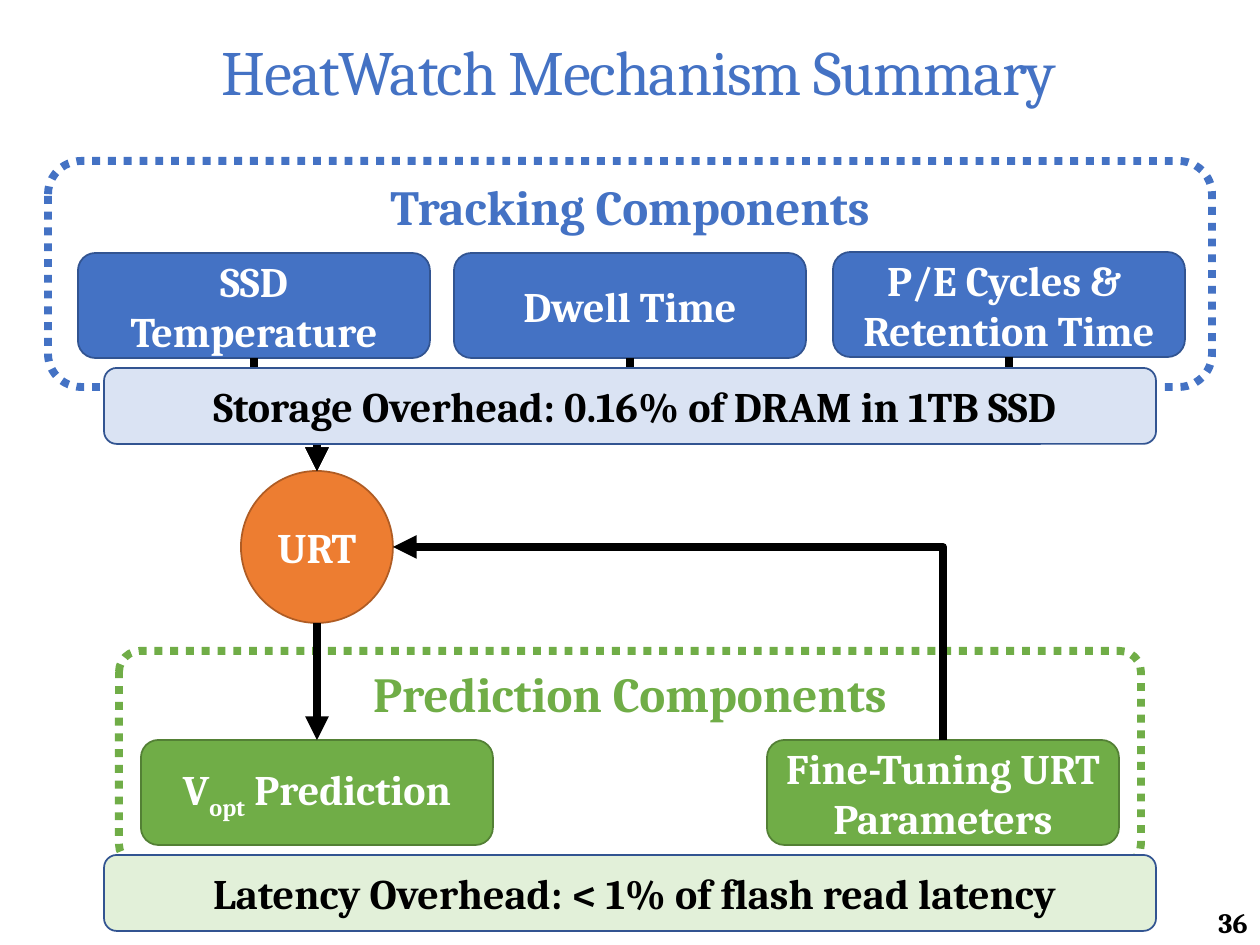
from dataclasses import dataclass

from lxml.etree import SubElement
from pptx import Presentation
from pptx.dml.color import RGBColor
from pptx.enum.dml import MSO_LINE
from pptx.enum.shapes import MSO_CONNECTOR, MSO_SHAPE
from pptx.enum.text import MSO_ANCHOR, MSO_AUTO_SIZE, PP_ALIGN
from pptx.oxml.ns import qn
from pptx.util import Pt

EMU_PER_PX = 914400 / 126
TOP, LEFT, BOTTOM, RIGHT = range(4)


@dataclass(frozen=True)
class Theme:
    font: str = "Cambria"
    blue: str = "4472C4"
    blue_edge: str = "325491"
    blue_pale: str = "DAE3F3"
    green: str = "70AD47"
    green_edge: str = "538035"
    green_pale: str = "E2F0D9"
    orange: str = "ED7D31"
    orange_edge: str = "AF5C24"
    black: str = "000000"
    white: str = "FFFFFF"
    title_size: int = 36
    group_size: int = 28
    label_size: int = 24
    number_size: int = 16
    thin: float = 1
    thick: float = 4.5


THEME = Theme()


def px(length):
    return round(length * EMU_PER_PX)


def rgb(color):
    return RGBColor.from_string(color)


def add_span(para, text, size, color, bold=True):
    span = para.add_run()
    span.text = text
    span.font.name = THEME.font
    span.font.size = Pt(size)
    span.font.bold = bold
    span.font.color.rgb = rgb(color)
    return span


def indent(para, left):
    properties = para._p.get_or_add_pPr()
    properties.set("marL", str(px(left)))
    properties.set("indent", "0")


def add_box(page, kind, place, fill, edge, width=THEME.thin):
    """Add a preset shape and return it with its centred first paragraph."""
    box = page.shapes.add_shape(kind, *map(px, place))
    box.shadow.inherit = False
    if fill:
        box.fill.solid()
        box.fill.fore_color.rgb = rgb(fill)
    else:
        box.fill.background()
    box.line.color.rgb = rgb(edge)
    box.line.width = Pt(width)
    box.text_frame.word_wrap = True
    box.text_frame.vertical_anchor = MSO_ANCHOR.MIDDLE
    para = box.text_frame.paragraphs[0]
    para.alignment = PP_ALIGN.CENTER
    return box, para


def add_group(page, place, corner, text, color):
    box, para = add_box(page, MSO_SHAPE.ROUNDED_RECTANGLE, place, None, color, THEME.thick)
    box.adjustments[0] = corner
    box.line.dash_style = MSO_LINE.ROUND_DOT
    box.text_frame.vertical_anchor = MSO_ANCHOR.TOP
    add_span(para, text, THEME.group_size, color)


def add_component(page, left, top, lines, fill, edge):
    """Each line is a list of (text, is_subscript) pieces."""
    place = (left, top, 352, 105)
    box, para = add_box(page, MSO_SHAPE.ROUNDED_RECTANGLE, place, fill, edge)
    for number, pieces in enumerate(lines):
        if number:
            para.add_line_break()
        for text, is_subscript in pieces:
            span = add_span(para, text, THEME.label_size, THEME.white)
            if is_subscript:
                span.font._element.set("baseline", "-25000")
    return box


def add_overhead(page, top, text, fill):
    place = (104, top, 1052, 76)
    _, para = add_box(page, MSO_SHAPE.ROUNDED_RECTANGLE, place, fill, THEME.blue_edge)
    para.space_before = Pt(6)
    indent(para, 9)
    add_span(para, text, THEME.label_size, THEME.black)


def add_arrow(page, source, source_side, target, target_side, preset="bentConnector3"):
    """Link two shapes with an arrow that leaves the source vertically."""
    arrow = page.shapes.add_connector(MSO_CONNECTOR.ELBOW, 0, 0, 0, 0)
    arrow.begin_connect(source, source_side)
    arrow.end_connect(target, target_side)

    # An oval has eight connection sites, so its sides are every second one
    for tag, shape, side in (("a:stCxn", source, source_side), ("a:endCxn", target, target_side)):
        if shape.auto_shape_type == MSO_SHAPE.OVAL:
            next(arrow._element.iter(qn(tag))).set("idx", str(side * 2))

    # A quarter turn makes the first leg vertical
    across = arrow.end_x - arrow.begin_x
    down = arrow.end_y - arrow.begin_y
    middle_x = (arrow.begin_x + arrow.end_x) // 2
    middle_y = (arrow.begin_y + arrow.end_y) // 2
    properties = arrow._element.spPr
    frame = properties.find(qn("a:xfrm"))
    frame.attrib.clear()
    frame.set("rot", str((90 if down > 0 else 270) * 60000))
    if (across > 0) == (down > 0):
        frame.set("flipV", "1")
    arrow.width, arrow.height = abs(down), abs(across)
    arrow.left = middle_x - arrow.width // 2
    arrow.top = middle_y - arrow.height // 2
    properties.find(qn("a:prstGeom")).set("prst", preset)

    arrow.line.color.rgb = rgb(THEME.black)
    arrow.line.width = Pt(THEME.thick)
    SubElement(arrow.line._get_or_add_ln(), qn("a:tailEnd"), type="triangle")
    SubElement(properties, qn("a:effectLst"))


def add_title(page, text):
    title = page.shapes.title
    title.left, title.top, title.width, title.height = map(px, (0, 0, 1260, 150))
    frame = title.text_frame
    frame.auto_size = MSO_AUTO_SIZE.NONE
    frame.vertical_anchor = MSO_ANCHOR.MIDDLE
    para = frame.paragraphs[0]
    para.alignment = PP_ALIGN.CENTER
    para.line_spacing = 0.9
    indent(para, 18)
    span = add_span(para, text, THEME.title_size, THEME.blue, bold=False)
    span.font._element.set("spc", "-70")


def add_page_number(page, number):
    box = page.shapes.add_textbox(*map(px, (1129, 898, 131, 47)))
    box.text_frame.word_wrap = True
    box.text_frame.vertical_anchor = MSO_ANCHOR.BOTTOM
    para = box.text_frame.paragraphs[0]
    para.alignment = PP_ALIGN.RIGHT
    add_span(para, number, THEME.number_size, THEME.black)


def main():
    deck = Presentation()
    deck.slide_width, deck.slide_height = px(1260), px(945)
    page = deck.slides.add_slide(deck.slide_layouts[5])
    add_title(page, "HeatWatch Mechanism Summary")
    add_page_number(page, "36")

    # Tracking components
    add_group(page, (48, 161, 1164, 226), 0.147, "Tracking Components", THEME.blue)
    trackers = [
        add_component(page, left, top, [[(line, False)] for line in lines],
                      THEME.blue, THEME.blue_edge)
        for left, top, lines in (
            (78, 253, ["SSD Temperature"]),
            (454, 253, ["Dwell Time"]),
            (833, 252, ["P/E Cycles & ", "Retention Time"]),
        )
    ]

    # Prediction components
    add_group(page, (119, 651, 1022, 214), 0.098, "Prediction Components", THEME.green)
    green = (THEME.green, THEME.green_edge)
    prediction = add_component(
        page, 141, 740, [[("V", False), ("opt", True), (" Prediction", False)]], *green)
    tuning = add_component(page, 767, 740, [[("Fine-Tuning URT Parameters", False)]], *green)

    # Central table and its links
    urt, para = add_box(page, MSO_SHAPE.OVAL, (241, 471, 152, 152),
                        THEME.orange, THEME.orange_edge)
    add_span(para, "URT", THEME.label_size, THEME.white)
    for tracker in trackers:
        add_arrow(page, tracker, BOTTOM, urt, TOP)
    add_arrow(page, tuning, TOP, urt, RIGHT, "bentConnector2")
    add_arrow(page, urt, BOTTOM, prediction, TOP)

    # Overhead bars cover the lower edges of both groups
    add_overhead(page, 368, "Storage Overhead: 0.16% of DRAM in 1TB SSD", THEME.blue_pale)
    add_overhead(page, 855, "Latency Overhead: < 1% of flash read latency", THEME.green_pale)

    deck.save("out.pptx")


if __name__ == "__main__":
    main()
